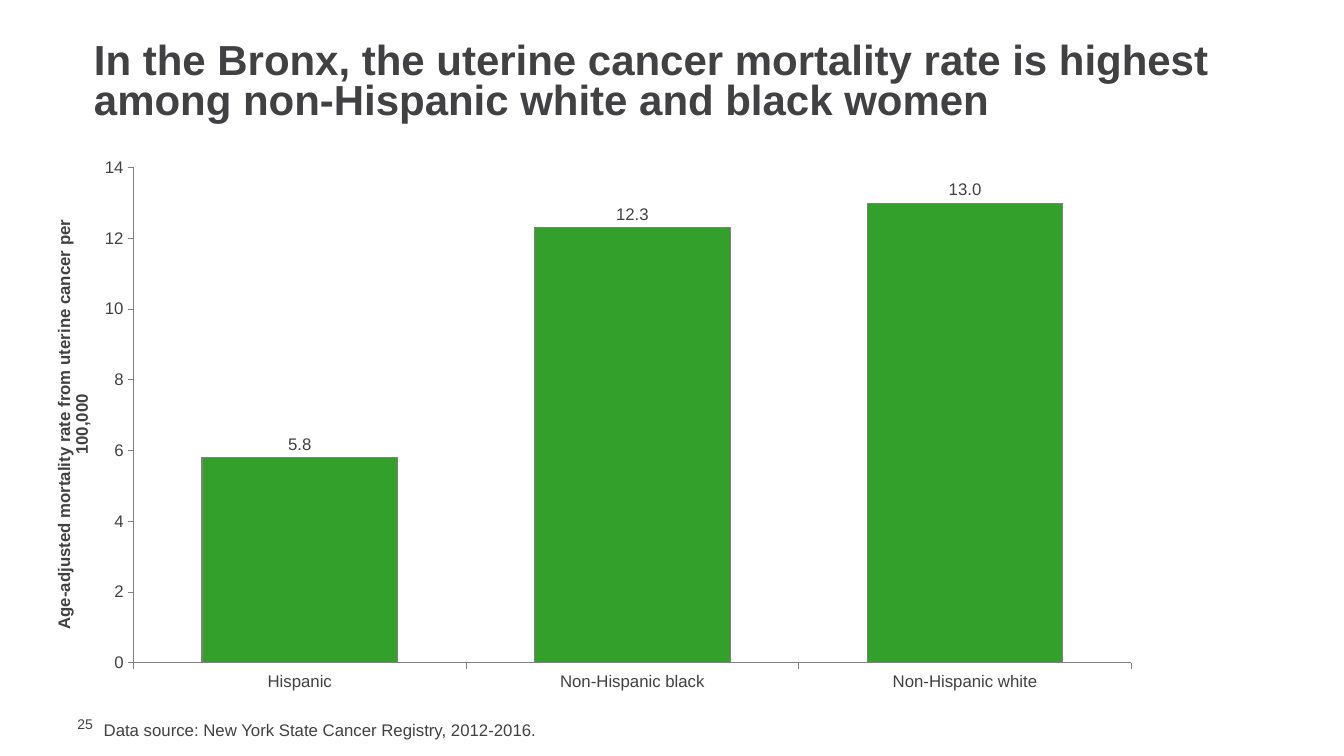
import pptx
import pptx.chart.data
import pptx.dml.color
import pptx.enum.chart
import pptx.enum.text
import pptx.oxml
import pptx.oxml.ns
import pptx.util
from pptx.util import Pt

TITLE = ("In the Bronx, the uterine cancer mortality rate is highest "
         "among non-Hispanic white and black women")
AXIS_TITLE = "Age-adjusted mortality rate from uterine cancer per 100,000"
SOURCE = "Data source: New York State Cancer Registry, 2012-2016."
PAGE_NUMBER = "25"
MORTALITY_RATES = {
    "Hispanic": 5.8,
    "Non-Hispanic black": 12.3,
    "Non-Hispanic white": 13.0,
}

FONT = "Arial"
TEXT_COLOR = pptx.dml.color.RGBColor(0x41, 0x40, 0x42)
BAR_COLOR = pptx.dml.color.RGBColor(0x33, 0xA0, 0x2C)
LINE_COLOR = pptx.dml.color.RGBColor(0x80, 0x80, 0x80)

# Left, top, width and height in points
TITLE_BOX = (60, 26.6, 840, 65.5)
CHART_BOX = (36, 108, 792, 393)
SOURCE_BOX = (67, 510.5, 714, 21.6)
PAGE_NUMBER_BOX = (48.2, 511.2, 31, 12.2)
# Inner plot area as fractions of the chart
PLOT_AREA = {"x": 0.075, "y": 0.03, "w": 0.9, "h": 0.9}


def style_font(font, size, bold=False):
    font.name = FONT
    font.size = Pt(size)
    font.bold = bold
    font.color.rgb = TEXT_COLOR


def style_line(line):
    line.color.rgb = LINE_COLOR
    line.width = Pt(0.75)


def add_text(slide, text, box, size, bold=False, line_spacing=None,
             anchor=pptx.enum.text.MSO_ANCHOR.TOP, margins=(7.2, 3.6, 7.2, 3.6)):
    shape = slide.shapes.add_textbox(*map(Pt, box))
    frame = shape.text_frame
    frame.word_wrap = True
    frame.vertical_anchor = anchor
    (frame.margin_left, frame.margin_top,
     frame.margin_right, frame.margin_bottom) = map(Pt, margins)
    paragraph = frame.paragraphs[0]
    paragraph.line_spacing = line_spacing
    run = paragraph.add_run()
    run.text = text
    style_font(run.font, size, bold)


def fix_plot_area(chart):
    """Place the inner plot area at the fractions in PLOT_AREA."""
    plot_area = chart._chartSpace.chart.plotArea
    for layout in plot_area.findall(pptx.oxml.ns.qn("c:layout")):
        plot_area.remove(layout)
    modes = "".join(f'<c:{key}Mode val="edge"/>' for key in "xy")
    sizes = "".join(f'<c:{key} val="{value}"/>' for key, value in PLOT_AREA.items())
    plot_area.insert(0, pptx.oxml.parse_xml(
        f'<c:layout {pptx.oxml.ns.nsdecls("c")}><c:manualLayout>'
        f'<c:layoutTarget val="inner"/>{modes}{sizes}'
        '</c:manualLayout></c:layout>'))


def add_rate_chart(slide):
    data = pptx.chart.data.CategoryChartData()
    data.categories = list(MORTALITY_RATES)
    data.add_series("Mortality rate", list(MORTALITY_RATES.values()))
    chart = slide.shapes.add_chart(
        pptx.enum.chart.XL_CHART_TYPE.COLUMN_CLUSTERED,
        *map(Pt, CHART_BOX), data).chart
    chart.has_legend = False
    chart.has_title = False
    style_font(chart.font, 10)
    fix_plot_area(chart)

    for axis in (chart.category_axis, chart.value_axis):
        axis.has_major_gridlines = False
        axis.major_tick_mark = pptx.enum.chart.XL_TICK_MARK.OUTSIDE
        axis.minor_tick_mark = pptx.enum.chart.XL_TICK_MARK.NONE
        style_font(axis.tick_labels.font, 12)
        style_line(axis.format.line)

    value_axis = chart.value_axis
    value_axis.minimum_scale = 0
    value_axis.maximum_scale = 14
    value_axis.major_unit = 2
    value_axis.tick_labels.number_format = "0"
    value_axis.tick_labels.number_format_is_linked = False
    title_run = value_axis.axis_title.text_frame.paragraphs[0].add_run()
    title_run.text = AXIS_TITLE
    style_font(title_run.font, 12, bold=True)

    plot = chart.plots[0]
    plot.gap_width = 70
    plot.vary_by_categories = False
    series = plot.series[0]
    series.format.fill.solid()
    series.format.fill.fore_color.rgb = BAR_COLOR
    style_line(series.format.line)
    labels = series.data_labels
    labels.show_value = True
    labels.number_format = "#,##0.0"
    labels.number_format_is_linked = False
    labels.position = pptx.enum.chart.XL_LABEL_POSITION.OUTSIDE_END
    style_font(labels.font, 12)


def main():
    presentation = pptx.Presentation()
    presentation.slide_width = Pt(960)
    presentation.slide_height = Pt(540)
    slide = presentation.slides.add_slide(presentation.slide_layouts[6])
    middle = pptx.enum.text.MSO_ANCHOR.MIDDLE
    add_text(slide, PAGE_NUMBER, PAGE_NUMBER_BOX, 10, anchor=middle,
             margins=(7.2, 0, 0, 0))
    add_text(slide, TITLE, TITLE_BOX, 30, bold=True, line_spacing=0.8, anchor=middle)
    add_rate_chart(slide)
    add_text(slide, SOURCE, SOURCE_BOX, 12)
    presentation.save("out.pptx")


if __name__ == "__main__":
    main()
